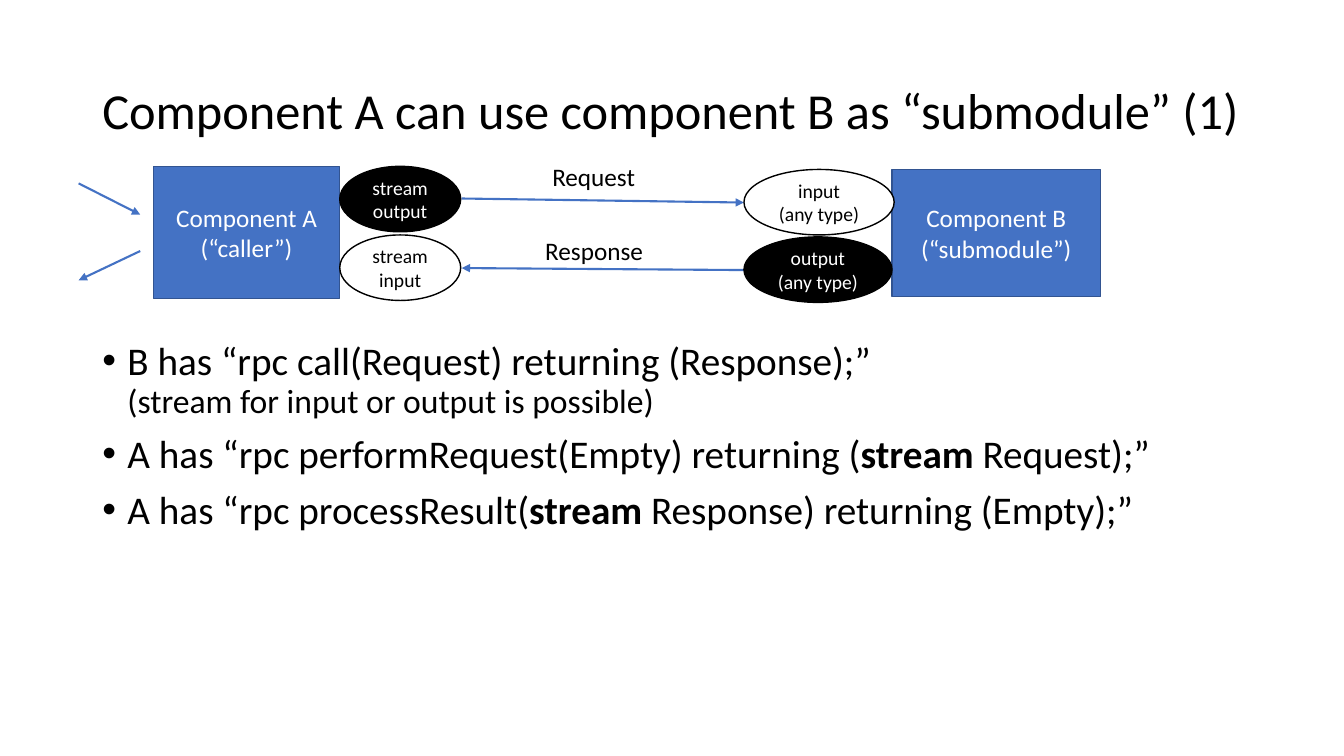
from lxml import etree
from pptx import Presentation
from pptx.dml.color import RGBColor
from pptx.enum.shapes import MSO_CONNECTOR, MSO_SHAPE
from pptx.enum.text import MSO_ANCHOR, PP_ALIGN
from pptx.oxml.ns import qn
from pptx.util import Pt

BLACK = RGBColor(0x00, 0x00, 0x00)
WHITE = RGBColor(0xFF, 0xFF, 0xFF)
BLUE = RGBColor(0x44, 0x72, 0xC4)
NAVY = RGBColor(0x32, 0x54, 0x91)
RECT, OVAL = MSO_SHAPE.RECTANGLE, MSO_SHAPE.OVAL
STRAIGHT = MSO_CONNECTOR.STRAIGHT
LEFT, CENTER = PP_ALIGN.LEFT, PP_ALIGN.CENTER
TOP, MIDDLE = MSO_ANCHOR.TOP, MSO_ANCHOR.MIDDLE
FONT = "Calibri"


def add_bullet(para):
    props = para._p.get_or_add_pPr()
    props.set("marL", str(Pt(18)))
    props.set("indent", str(-Pt(18)))
    etree.SubElement(props, qn("a:buFont")).set("typeface", "Arial")
    etree.SubElement(props, qn("a:buChar")).set("char", "•")


def write(frame, paras, size=18, color=BLACK, align=LEFT, anchor=TOP,
          pad=(7.2, 3.6), line=1, before=0, bullet=False):
    frame.word_wrap = True
    frame.vertical_anchor = anchor
    frame.margin_left = frame.margin_right = Pt(pad[0])
    frame.margin_top = frame.margin_bottom = Pt(pad[1])
    for i, runs in enumerate(paras):
        para = frame.paragraphs[0] if i == 0 else frame.add_paragraph()
        para.alignment = align
        para.line_spacing = line
        para.space_before = Pt(before)
        if bullet:
            add_bullet(para)
        for text, form in runs:
            if form.get("newline"):
                para.add_line_break()
            run = para.add_run()
            run.text = text
            run.font.name = FONT
            run.font.size = Pt(form.get("size", size))
            run.font.bold = form.get("bold", False)
            run.font.color.rgb = color


def add_text(slide, box, paras, **form):
    shape = slide.shapes.add_textbox(*map(Pt, box))
    write(shape.text_frame, paras, **form)


def add_node(slide, kind, box, lines, fill, edge, color, size):
    shape = slide.shapes.add_shape(kind, *map(Pt, box))
    shape.shadow.inherit = False
    shape.fill.solid()
    shape.fill.fore_color.rgb = fill
    shape.line.color.rgb = edge
    shape.line.width = Pt(1)
    write(shape.text_frame, [[(text, {})] for text in lines], size=size,
          color=color, align=CENTER, anchor=MIDDLE, pad=(0, 0))


def add_arrow(slide, start, end):
    arrow = slide.shapes.add_connector(STRAIGHT, *map(Pt, start + end))
    arrow.line.color.rgb = BLUE
    arrow.line.width = Pt(1.5)
    etree.SubElement(arrow.line._get_or_add_ln(), qn("a:tailEnd")).set("type", "triangle")
    etree.SubElement(arrow._element.spPr, qn("a:effectLst"))


def draw_title(slide, box):
    add_text(slide, box, [[("Component A can use component B as “submodule” (1)", {})]],
             size=36, anchor=MIDDLE, line=0.9)


def draw_body(slide, box):
    bold = {"bold": True}
    paras = [
        [("B has “rpc call(Request) returning (Response);”", {}),
         ("(stream for input or output is possible)", {"size": 24, "newline": True})],
        [("A has “rpc performRequest(Empty) returning (", {}),
         ("stream", bold), (" Request);”", {})],
        [("A has “rpc processResult(", {}),
         ("stream", bold), (" Response) returning (Empty);”", {})],
    ]
    add_text(slide, box, paras, size=28, line=0.9, before=10, bullet=True)


def draw_flow(slide, box):
    left, top = box[:2]

    def place(x, y, *size):
        return (left + x, top + y, *size)

    arrows = [
        ((273.6, 23), (475.2, 25.9)),
        ((475.2, 74.1), (273.6, 72.7)),
        ((0, 12.2), (44, 34.5)),
        ((44, 60.5), (0, 81.4)),
    ]
    for start, end in arrows:
        add_arrow(slide, place(*start), place(*end))

    for text, x, y in [("Response", 326.2, 45.4), ("Request", 331.2, -7.2)]:
        add_text(slide, place(x, y, 86.4, 28.8), [[(text, {})]])

    blocks = [
        ("Component A", "(“caller”)", 53.3, 0, 133.2, 94.3),
        ("Component B", "(“submodule”)", 581, 2.2, 149, 90.7),
    ]
    for name, role, *area in blocks:
        add_node(slide, RECT, place(*area), (name, role), BLUE, NAVY, WHITE, 18)

    ports = [
        ("stream", "input", 186.5, 49, 86.4, WHITE, BLACK),
        ("stream", "output", 186.5, 0, 86.4, BLACK, WHITE),
        ("input", "(any type)", 475.2, 2.2, 107.3, WHITE, BLACK),
        ("output", "(any type)", 475.2, 50.4, 105.8, BLACK, WHITE),
    ]
    for first, second, x, y, width, fill, color in ports:
        add_node(slide, OVAL, place(x, y, width, 46.8), (first, second),
                 fill, BLACK, color, 14)


def main():
    deck = Presentation()
    deck.slide_width, deck.slide_height = Pt(960), Pt(540)
    slide = deck.slides.add_slide(deck.slide_layouts[6])
    draw_title(slide, (66, 28.8, 828, 104.4))
    draw_body(slide, (66, 240.5, 828, 267))
    draw_flow(slide, (56.2, 118.8, 730, 97.2))
    deck.save("out.pptx")


if __name__ == "__main__":
    main()
